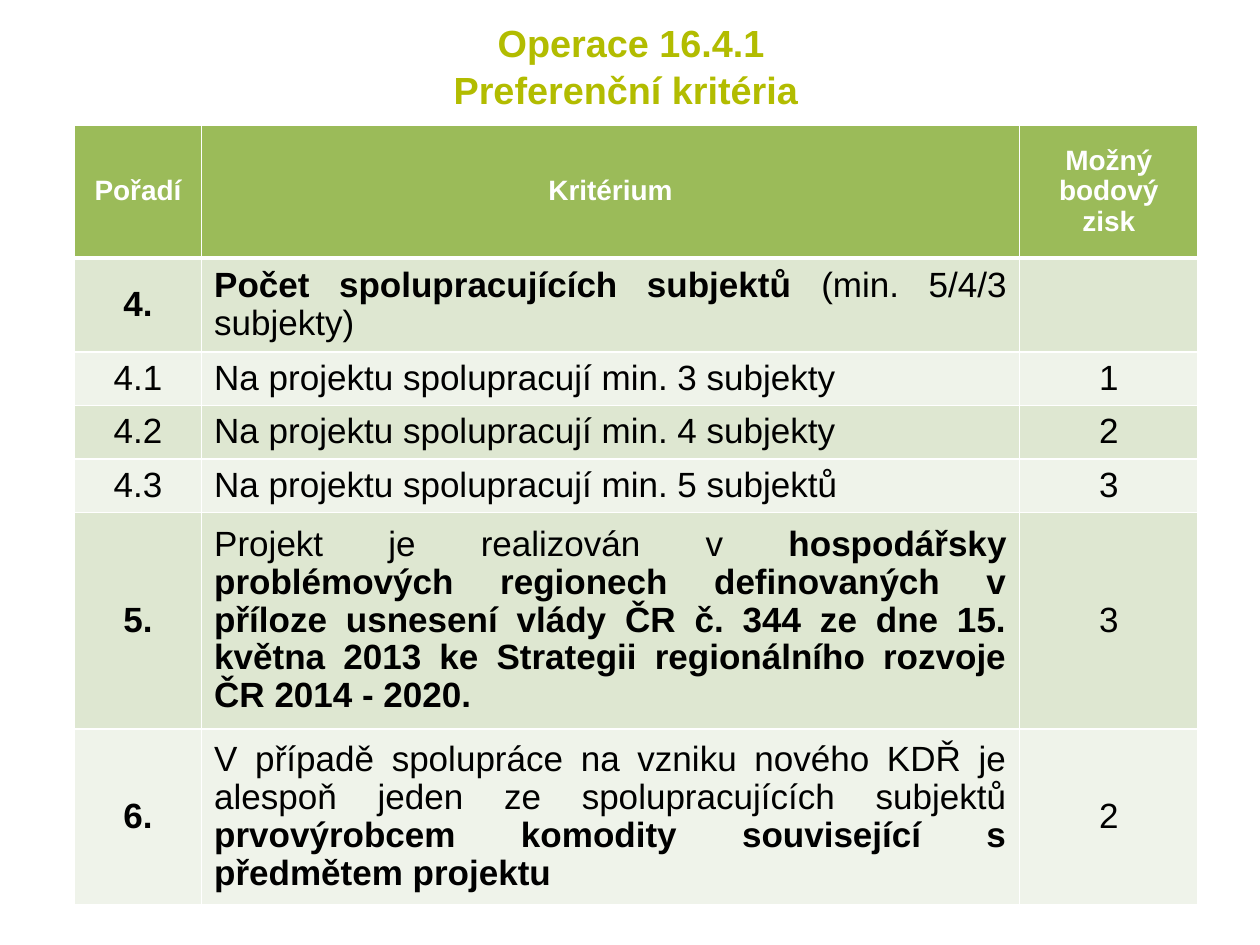
"""Build the slide with the preference criteria of operation 16.4.1."""
from lxml import etree
from pptx import Presentation, util as u
from pptx.dml.color import RGBColor
from pptx.enum import text
from pptx.oxml import ns

FONT = "Arial"
HEADER_FILL, ODD_FILL, EVEN_FILL = "9BBB59", "DEE7D1", "EFF3EA"
WHITE, BLACK, TITLE_COLOR = "FFFFFF", "000000", "B2BC00"
COLUMN_SHARES = [0.101, 0.649, 0.142]
ROW_SHARES = [0.14, 0.096, 0.055, 0.055, 0.055, 0.22, 0.177]
ROWS = [
    ("*Pořadí*", "*Kritérium*", "*Možný bodový zisk*"),
    ("*4.*", "*Počet spolupracujících subjektů* (min. 5/4/3 subjekty)", ""),
    ("4.1", "Na projektu spolupracují min. 3 subjekty", "1"),
    ("4.2", "Na projektu spolupracují min. 4 subjekty", "2"),
    ("4.3", "Na projektu spolupracují min. 5 subjektů", "3"),
    ("*5.*", "Projekt je realizován v *hospodářsky problémových regionech definovaných "
     "v příloze usnesení vlády ČR č. 344 ze dne 15. května 2013 ke Strategii "
     "regionálního rozvoje ČR 2014 - 2020.*", "3"),
    ("*6.*", "V případě spolupráce na vzniku nového KDŘ je alespoň jeden ze "
     "spolupracujících subjektů *prvovýrobcem komodity související s předmětem projektu*", "2"),
]


def style_font(font, size, color, bold):
    font.name, font.size, font.bold = FONT, u.Pt(size), bold
    font.color.rgb = RGBColor.from_string(color)


def set_border(cell, side, points):
    line = etree.SubElement(cell._tc.get_or_add_tcPr(), ns.qn(f"a:ln{side}"), w=str(u.Pt(points)))
    fill = etree.SubElement(line, ns.qn("a:solidFill"))
    etree.SubElement(fill, ns.qn("a:srgbClr"), val=WHITE)


presentation = Presentation()
presentation.slide_width, presentation.slide_height = u.Inches(10), u.Inches(7.5)
width, height = presentation.slide_width, presentation.slide_height
slide = presentation.slides.add_slide(presentation.slide_layouts[6])

title = slide.shapes.add_textbox(int(width * 0.051), int(height * 0.017),
                                 int(width * 0.9), int(height * 0.103))
title.text_frame.word_wrap = True
title.text_frame.vertical_anchor = text.MSO_ANCHOR.MIDDLE
title.text_frame.text = "Operace 16.4.1\vPreferenční kritéria "
paragraph = title.text_frame.paragraphs[0]
paragraph.alignment = text.PP_ALIGN.CENTER
paragraph.line_spacing = 1.04
for run in paragraph.runs:
    style_font(run.font, 21.6, TITLE_COLOR, True)

table = slide.shapes.add_table(len(ROWS), len(COLUMN_SHARES), int(width * 0.059), int(height * 0.133),
                               int(width * sum(COLUMN_SHARES)), int(height * sum(ROW_SHARES))).table
for column, share in zip(table.columns, COLUMN_SHARES):
    column.width = int(width * share)

for row_index, (row, share) in enumerate(zip(table.rows, ROW_SHARES)):
    row.height = int(height * share)
    is_header = row_index == 0
    row_fill = HEADER_FILL if is_header else ODD_FILL if row_index % 2 else EVEN_FILL
    size, color = (16, WHITE) if is_header else (20, BLACK)
    for column_index, cell in enumerate(row.cells):
        cell.vertical_anchor = text.MSO_ANCHOR.MIDDLE
        for side in "LRTB":
            under_header = (row_index, side) in [(0, "B"), (1, "T")]
            set_border(cell, side, 3 if under_header else 1)
        cell.fill.solid()
        cell.fill.fore_color.rgb = RGBColor.from_string(row_fill)
        paragraph = cell.text_frame.paragraphs[0]
        is_criterion = column_index == 1 and not is_header
        paragraph.alignment = text.PP_ALIGN.JUSTIFY if is_criterion else text.PP_ALIGN.CENTER
        paragraph.line_spacing = 0.97
        for part_index, part in enumerate(ROWS[row_index][column_index].split("*")):
            if part:
                run = paragraph.add_run()
                run.text = part
                style_font(run.font, size, color, part_index % 2 == 1)

presentation.save("out.pptx")
